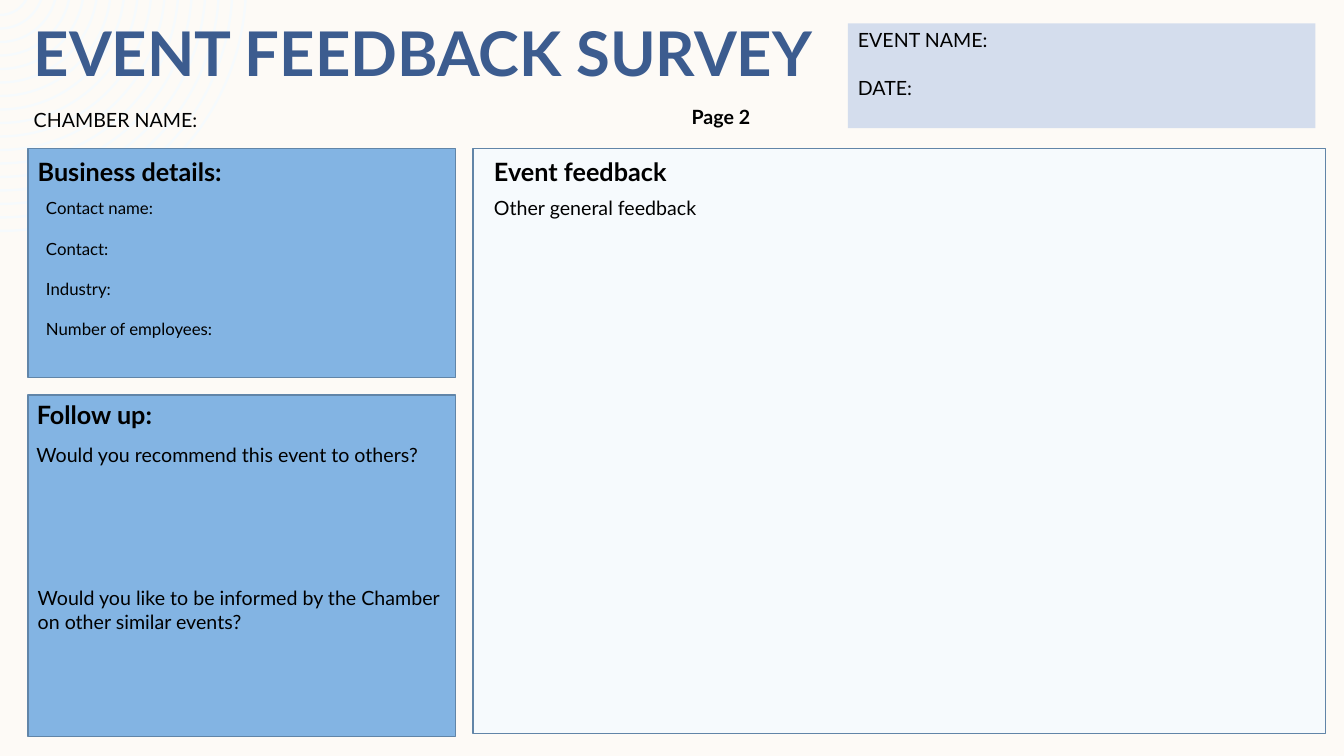
from dataclasses import dataclass
from math import asin, cos, pi, sin, tan

from lxml.etree import SubElement
from pptx import Presentation
from pptx.dml.color import RGBColor
from pptx.enum.shapes import MSO_SHAPE
from pptx.enum.text import MSO_ANCHOR, MSO_AUTO_SIZE, PP_ALIGN
from pptx.oxml.ns import qn
from pptx.shapes.autoshape import Shape
from pptx.slide import Slide
from pptx.util import Cm, Pt


@dataclass(frozen=True)
class Theme:
    font: str = "Lato"
    paper: str = "FDFAF6"
    pale: str = "F6FAFD"
    blue: str = "83B4E3"
    lavender: str = "D4DDED"
    outline: str = "6185A8"
    title: str = "3C5C8F"
    ink: str = "000000"
    title_size: int = 44
    heading_size: int = 18
    body_size: int = 14
    detail_size: int = 12


THEME = Theme()


@dataclass(frozen=True)
class Area:
    """A rectangle in centimetres."""
    left: float
    top: float
    width: float
    height: float


@dataclass(frozen=True)
class Panel:
    area: Area
    fill: str
    outlined: bool = True
    lines: tuple[str, ...] = ()


@dataclass(frozen=True)
class Label:
    area: Area
    lines: tuple[str, ...]
    size: int = THEME.body_size
    bold: bool = False
    color: str = THEME.ink
    anchor: MSO_ANCHOR = MSO_ANCHOR.TOP


PANELS = (
    Panel(Area(0.71, 3.75, 10.77, 5.77), THEME.blue),
    Panel(Area(0.71, 9.95, 10.77, 8.61), THEME.blue),
    Panel(Area(11.92, 3.75, 21.49, 14.73), THEME.pale),
    Panel(Area(21.37, 0.59, 11.78, 2.64), THEME.lavender, False, ("EVENT NAME:", "DATE:")),
)

LABELS = (
    Label(Area(0.6, 0.25, 29.64, 2.13), ("EVENT FEEDBACK SURVEY",),
          THEME.title_size, True, THEME.title, MSO_ANCHOR.MIDDLE),
    Label(Area(0.6, 2.59, 14.22, 0.86), ("CHAMBER NAME:",)),
    Label(Area(17.18, 2.51, 3.25, 0.86), ("Page 2",), bold=True),
    Label(Area(0.7, 3.81, 14.61, 1.02), ("Business details:",), THEME.heading_size, True),
    Label(Area(0.91, 4.87, 10.31, 3.84),
          ("Contact name:", "Contact:", "Industry:", "Number of employees:"), THEME.detail_size),
    Label(Area(0.68, 9.94, 8.81, 1.02), ("Follow up:",), THEME.heading_size, True),
    Label(Area(0.67, 11.04, 10.8, 0.86), ("Would you recommend this event to others?",)),
    Label(Area(0.7, 14.64, 10.8, 1.45),
          ("Would you like to be informed by the Chamber on other similar events?",)),
    Label(Area(12.2, 3.81, 14.61, 1.02), ("Event feedback",), THEME.heading_size, True),
    Label(Area(12.2, 4.8, 10.8, 0.86), ("Other general feedback",)),
)


def place(area: Area) -> tuple[Cm, Cm, Cm, Cm]:
    return Cm(area.left), Cm(area.top), Cm(area.width), Cm(area.height)


def paint(shape: Shape, color: str, outlined: bool = False) -> None:
    shape.shadow.inherit = False
    shape.fill.solid()
    shape.fill.fore_color.rgb = RGBColor.from_string(color)
    if outlined:
        shape.line.color.rgb = RGBColor.from_string(THEME.outline)
        shape.line.width = Pt(1)
    else:
        shape.line.fill.background()


def write(shape: Shape, label: Label) -> None:
    """Fill a shape with lines of text, one line height apart."""
    frame = shape.text_frame
    frame.word_wrap = True
    frame.vertical_anchor = label.anchor
    for index, line in enumerate(label.lines):
        paragraph = frame.add_paragraph() if index else frame.paragraphs[0]
        paragraph.text = line
        paragraph.alignment = PP_ALIGN.LEFT
        paragraph.space_before = Pt(1.2 * label.size if index else 0)
        paragraph.font.name = THEME.font
        paragraph.font.size = Pt(label.size)
        paragraph.font.bold = label.bold
        paragraph.font.color.rgb = RGBColor.from_string(label.color)


def arc_points(radius: float, center_top: float) -> list[tuple[Cm, Cm]]:
    """Bézier points of an arc from the page top down to the left edge."""
    start, end = asin(-center_top / radius), pi / 2
    reach = 4 / 3 * tan((end - start) / 4)
    corners = (
        (cos(start), sin(start)),
        (cos(start) - reach * sin(start), sin(start) + reach * cos(start)),
        (reach, 1),
        (0, 1),
    )
    return [(Cm(radius * across), Cm(center_top + radius * down)) for across, down in corners]


def bend_rings(shape: Shape) -> None:
    """Join each ring's straight segments into an outer curve, a line and an inner curve."""
    for outline in shape.element.iter(qn("a:path")):
        segments = outline.findall(qn("a:lnTo"))
        for first in range(0, len(segments), 7):
            for start in (first, first + 4):
                curve = SubElement(outline, qn("a:cubicBezTo"))
                segments[start].addprevious(curve)
                for segment in segments[start:start + 3]:
                    curve.append(segment[0])
                    outline.remove(segment)


def draw_corner_rings(page: Slide) -> None:
    """Draw the rings as one shape and place it on the slide master."""
    center_top, smallest, gap, thickness = -0.38, 0.79, 0.34, 0.06
    builder = page.shapes.build_freeform()
    for ring in range(17):
        radius = smallest + ring * gap
        outer = arc_points(radius, center_top)
        inner = arc_points(radius - thickness, center_top)
        builder.move_to(*outer[0])
        builder.add_line_segments(outer[1:] + inner[::-1], close=True)
    rings = builder.convert_to_shape()
    outline = next(rings.element.iter(qn("a:path")))
    outline.remove(outline[0])
    bend_rings(rings)
    paint(rings, THEME.pale)
    page.slide_layout.slide_master.shapes.element.insert(2, rings.element)


def draw_panel(page: Slide, panel: Panel) -> None:
    box = page.shapes.add_shape(MSO_SHAPE.RECTANGLE, *place(panel.area))
    paint(box, panel.fill, panel.outlined)
    if panel.lines:
        write(box, Label(panel.area, panel.lines))


def draw_label(page: Slide, label: Label) -> None:
    box = page.shapes.add_textbox(*place(label.area))
    write(box, label)
    if label.anchor == MSO_ANCHOR.TOP:
        box.text_frame.auto_size = MSO_AUTO_SIZE.SHAPE_TO_FIT_TEXT


def main() -> None:
    deck = Presentation()
    deck.slide_width, deck.slide_height = Cm(33.87), Cm(19.05)
    page = deck.slides.add_slide(deck.slide_layouts[6])
    page.background.fill.solid()
    page.background.fill.fore_color.rgb = RGBColor.from_string(THEME.paper)
    draw_corner_rings(page)
    for panel in PANELS:
        draw_panel(page, panel)
    for label in LABELS:
        draw_label(page, label)
    deck.save("out.pptx")


if __name__ == "__main__":
    main()
